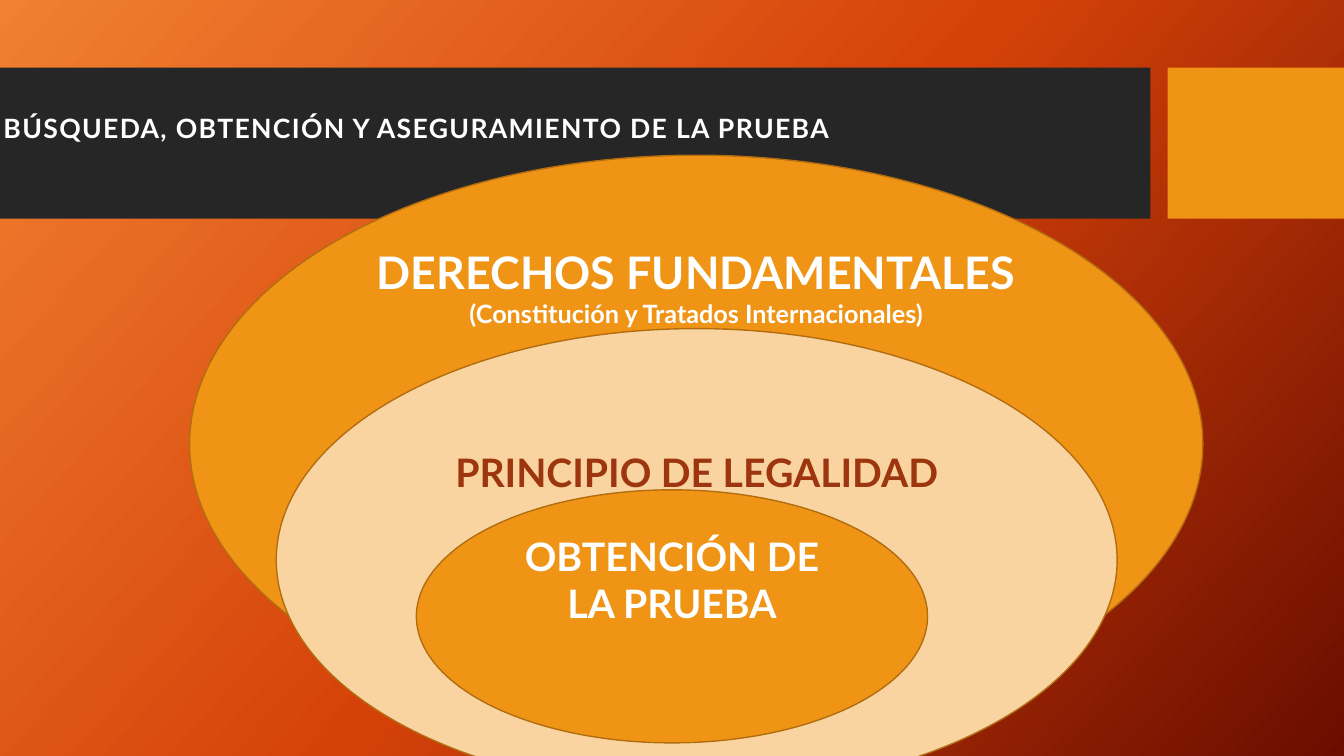
from copy import deepcopy
from dataclasses import dataclass

from pptx import Presentation
from pptx.dml.color import RGBColor
from pptx.enum.shapes import MSO_SHAPE
from pptx.enum.text import MSO_ANCHOR, PP_ALIGN
from pptx.oxml.ns import qn
from pptx.shapes.autoshape import Shape
from pptx.slide import Slide
from pptx.text.text import TextFrame
from pptx.util import Inches, Pt

COLORS = {
    "glow": "F18031", "flame": "D54209", "ember": "6A0D00",
    "dark": "262626", "orange": "F09415", "cream": "F9D4A1",
    "edge": "B26D10", "white": "FFFFFF", "rust": "9D360E",
}
Box = tuple[float, float, float, float]


@dataclass
class Line:
    text: str
    size: int
    color: str = "white"


@dataclass
class Oval:
    box: Box
    fill: str
    lines: list[Line]
    top: float = 0.05


BANDS: list[tuple[Box, str]] = [
    ((0, 0.67, 11.41, 1.5), "dark"),
    ((11.58, 0.67, 1.75, 1.5), "orange"),
]
TITLE = Line("BÚSQUEDA, OBTENCIÓN Y ASEGURAMIENTO DE LA PRUEBA", 19)
OVALS = [
    Oval((1.88, 1.54, 10.05, 5.73), "orange", [
        Line("DERECHOS FUNDAMENTALES", 32),
        Line("(Constitución y Tratados Internacionales)", 18),
    ]),
    Oval((2.74, 3.26, 8.34, 4.59), "cream",
         [Line("PRINCIPIO DE LEGALIDAD", 28, "rust")], top=0.52),
    Oval((4.13, 4.86, 5.07, 2.51), "orange",
         [Line("OBTENCIÓN DE LA PRUEBA", 28)]),
]


def rgb(name: str) -> RGBColor:
    return RGBColor.from_string(COLORS[name])


def paint(slide: Slide) -> None:
    """Fill the background with a slanted gradient of three stops."""
    fill = slide.background.fill
    fill.gradient()
    fill.gradient_angle = 318
    stops = slide.element.find(".//" + qn("a:gsLst"))
    stops.insert(1, deepcopy(stops[0]))
    names = ("glow", "flame", "ember")
    for stop, name, place in zip(fill.gradient_stops, names, (0, 0.5, 1)):
        stop.color.rgb = rgb(name)
        stop.position = place


def add_form(slide: Slide, kind: MSO_SHAPE, box: Box, fill: str) -> Shape:
    form = slide.shapes.add_shape(kind, *map(Inches, box))
    form.shadow.inherit = False
    form.fill.solid()
    form.fill.fore_color.rgb = rgb(fill)
    form.line.fill.background()
    return form


def write(frame: TextFrame, lines: list[Line], anchor: MSO_ANCHOR) -> None:
    frame.word_wrap = True
    frame.vertical_anchor = anchor
    for i, line in enumerate(lines):
        para = frame.add_paragraph() if i else frame.paragraphs[0]
        para.text = line.text
        para.alignment = PP_ALIGN.CENTER
        font = para.font
        font.name = "Lato"
        font.size = Pt(line.size)
        font.bold = True
        font.color.rgb = rgb(line.color)


def add_title(slide: Slide) -> None:
    box = slide.shapes.add_textbox(*map(Inches, (-2.29, 0.88, 12.85, 0.77)))
    write(box.text_frame, [TITLE], MSO_ANCHOR.MIDDLE)
    run = box.text_frame.paragraphs[0].runs[0]
    run.font.language_id = None
    run.font._element.set("spc", "100")


def add_oval(slide: Slide, oval: Oval) -> None:
    form = add_form(slide, MSO_SHAPE.OVAL, oval.box, oval.fill)
    form.line.color.rgb = rgb("edge")
    form.line.width = Pt(1)
    form.text_frame.margin_top = Inches(oval.top)
    write(form.text_frame, oval.lines, MSO_ANCHOR.TOP)


def main() -> None:
    deck = Presentation()
    deck.slide_width, deck.slide_height = Inches(13.33), Inches(7.5)
    slide = deck.slides.add_slide(deck.slide_layouts[6])
    paint(slide)
    for box, fill in BANDS:
        add_form(slide, MSO_SHAPE.RECTANGLE, box, fill)
    add_title(slide)
    for oval in OVALS:
        add_oval(slide, oval)
    deck.save("out.pptx")


if __name__ == "__main__":
    main()
